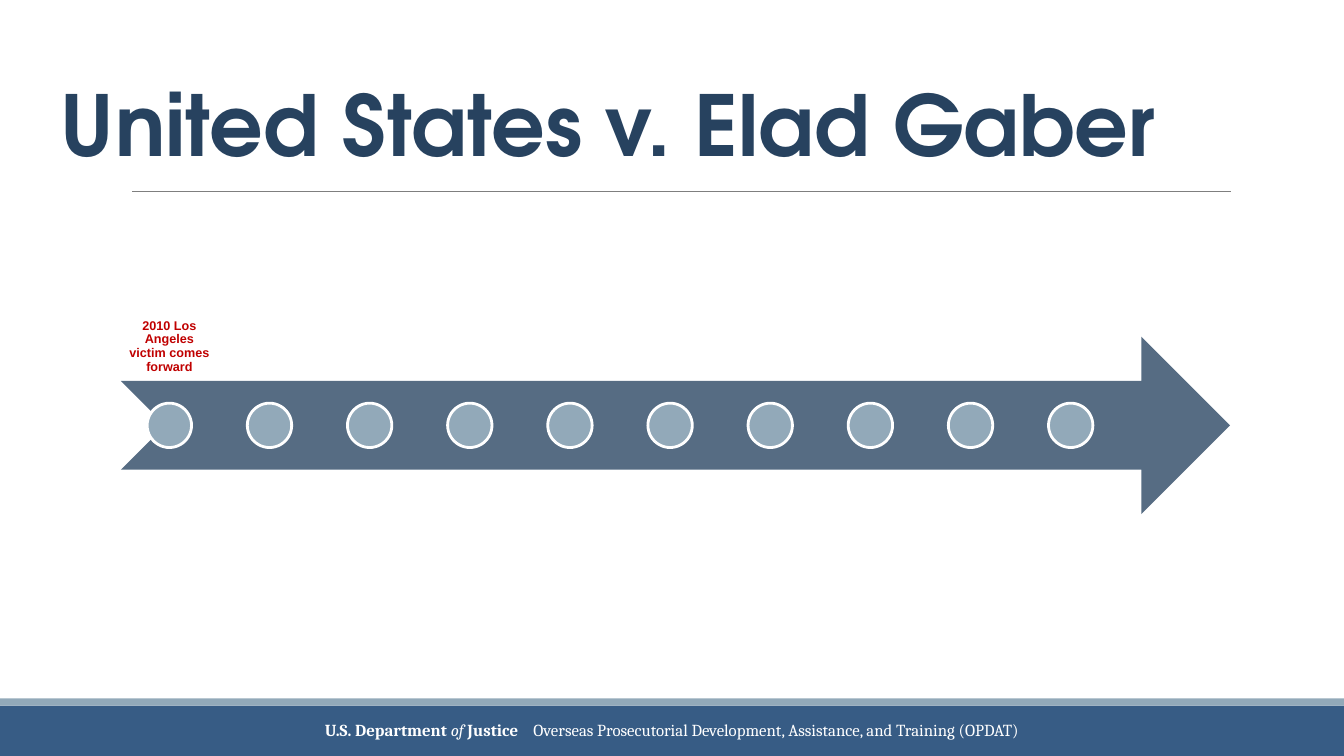
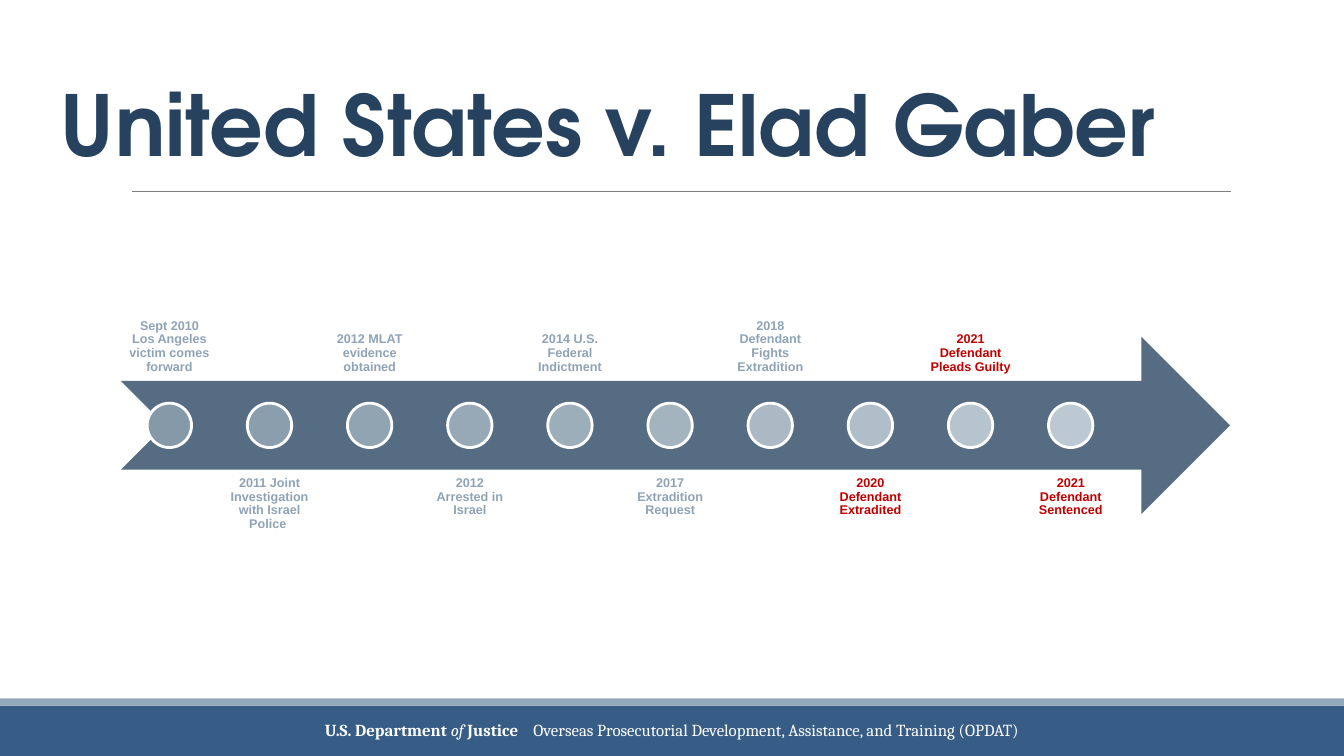
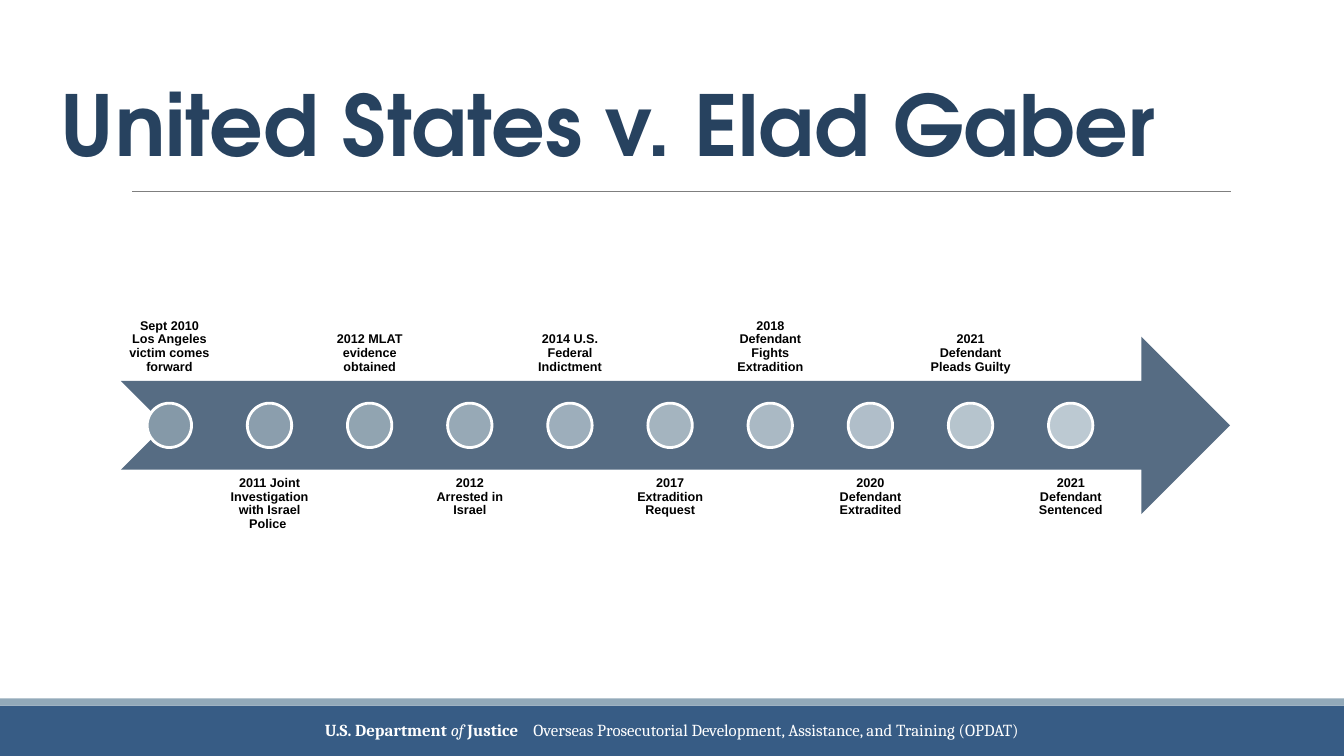
from pptx import Presentation
from pptx.dml.color import RGBColor
from pptx.enum.shapes import MSO_CONNECTOR, MSO_SHAPE
from pptx.enum.text import MSO_ANCHOR, PP_ALIGN
from pptx.oxml.ns import qn
from pptx.util import Inches, Pt
from lxml import etree

RECTANGLE, OVAL = MSO_SHAPE.RECTANGLE, MSO_SHAPE.OVAL
NOTCHED_ARROW = MSO_SHAPE.NOTCHED_RIGHT_ARROW
STRAIGHT = MSO_CONNECTOR.STRAIGHT
TOP, MIDDLE, BOTTOM = MSO_ANCHOR.TOP, MSO_ANCHOR.MIDDLE, MSO_ANCHOR.BOTTOM
LEFT, CENTER, RIGHT = PP_ALIGN.LEFT, PP_ALIGN.CENTER, PP_ALIGN.RIGHT

NAVY, BLUE, STEEL, SLATE = "27425F", "375C85", "92A9B9", "566C83"
WHITE, BLACK, GRAY, RED, FADED = "FFFFFF", "000000", "7F7F7F", "C00000", "8FA3B6"
DARK_DOT, LIGHT_DOT = "8599A8", "BCC9D2"

TITLE = "United States v. Elad Gaber"
DEPARTMENT = [("U.S. Department ", True, False), ("of", False, True), (" Justice", True, False)]
OFFICE = [("Overseas Prosecutorial Development, Assistance, and Training (OPDAT)", False, False)]
EVENTS = [
    "Sept 2010 Los Angeles victim comes forward",
    "2011 Joint Investigation with Israel Police ",
    "2012 MLAT evidence obtained",
    "2012 Arrested in Israel",
    "2014 U.S. Federal Indictment",
    "2017 Extradition Request",
    "2018 Defendant Fights Extradition",
    "2020 Defendant Extradited",
    "2021 Defendant Pleads Guilty",
    "2021 Defendant Sentenced",
]
TIMELINES = [
    (["2010 Los Angeles victim comes forward"], [RED], STEEL, STEEL),
    (EVENTS, [FADED] * 7 + [RED] * 3, DARK_DOT, LIGHT_DOT),
    (EVENTS, [BLACK] * 10, DARK_DOT, LIGHT_DOT),
]

DOT_COUNT = 10
FIRST_CENTER, PITCH = 1.68, 0.9933
DOT, LABEL_WIDTH, LABEL_HEIGHT = 0.44, 0.95, 1.76


def write(frame, text, size=9, font="Arial", color=BLACK, bold=True, italic=False,
          align=CENTER, anchor=TOP, spacing=0.9, inset_x=0.07, inset_y=0.07):
    frame.word_wrap = True
    frame.vertical_anchor = anchor
    frame.margin_left = frame.margin_right = Inches(inset_x)
    frame.margin_top = frame.margin_bottom = Inches(inset_y)
    paragraph = frame.paragraphs[0]
    paragraph.alignment = align
    paragraph.line_spacing = spacing
    run = paragraph.add_run()
    run.text = text
    run.font.name, run.font.size = font, Pt(size)
    run.font.bold, run.font.italic = bold, italic
    run.font.color.rgb = RGBColor.from_string(color)


def add_block(slide, kind, left, top, width, height, fill, line=None):
    block = slide.shapes.add_shape(kind, Inches(left), Inches(top), Inches(width), Inches(height))
    block.shadow.inherit = False
    block.fill.solid()
    block.fill.fore_color.rgb = RGBColor.from_string(fill)
    if line:
        block.line.color.rgb = RGBColor.from_string(line)
        block.line.width = Pt(2)
    else:
        block.line.fill.background()


prs = Presentation()
prs.slide_width, prs.slide_height = Inches(13.33), Inches(7.5)

for labels, label_colors, first_fill, last_fill in TIMELINES:
    slide = prs.slides.add_slide(prs.slide_layouts[5])

    add_block(slide, RECTANGLE, 0, 7, 13.33, 0.5, BLUE)
    add_block(slide, RECTANGLE, 0, 6.93, 13.33, 0.07, STEEL)
    for runs, left, width, align in [(DEPARTMENT, 2.63, 2.58, RIGHT), (OFFICE, 5.22, 5.49, LEFT)]:
        footer = slide.shapes.add_textbox(Inches(left), Inches(7.1), Inches(width), Inches(0.32))
        for text, bold, italic in runs:
            write(footer.text_frame, text, size=12, font="Cambria", color=WHITE, bold=bold,
                  italic=italic, align=align, anchor=MIDDLE, spacing=0.8, inset_y=0.04)

    rule = slide.shapes.add_connector(STRAIGHT, Inches(1.31), Inches(1.9), Inches(12.21), Inches(1.9))
    rule.line.color.rgb = RGBColor.from_string(GRAY)
    rule.line.width = Pt(0.75)
    etree.SubElement(rule._element.spPr, qn("a:effectLst"))

    title = slide.shapes.title
    title.left, title.top = Inches(0.5), Inches(0.31)
    title.width, title.height = Inches(11.7), Inches(1.46)
    write(title.text_frame, TITLE, size=60, font="TeX Gyre Adventor", color=NAVY, align=LEFT,
          anchor=BOTTOM, spacing=0.85, inset_x=0.1, inset_y=0.05)

    add_block(slide, NOTCHED_ARROW, 1.2, 3.34, 11, 1.76, SLATE)
    first_rgb, last_rgb = RGBColor.from_string(first_fill), RGBColor.from_string(last_fill)
    for i in range(DOT_COUNT):
        share = i / (DOT_COUNT - 1)
        fill = "".join(f"{round(a + (b - a) * share):02X}" for a, b in zip(first_rgb, last_rgb))
        add_block(slide, OVAL, FIRST_CENTER + i * PITCH - DOT / 2, 4, DOT, DOT, fill, line=WHITE)

    for i, (event, color) in enumerate(zip(labels, label_colors)):
        top, anchor = (4.66, TOP) if i % 2 else (2.02, BOTTOM)
        label = slide.shapes.add_textbox(
            Inches(FIRST_CENTER + i * PITCH - LABEL_WIDTH / 2), Inches(top),
            Inches(LABEL_WIDTH), Inches(LABEL_HEIGHT))
        write(label.text_frame, event, color=color, anchor=anchor)

prs.save("out.pptx")
